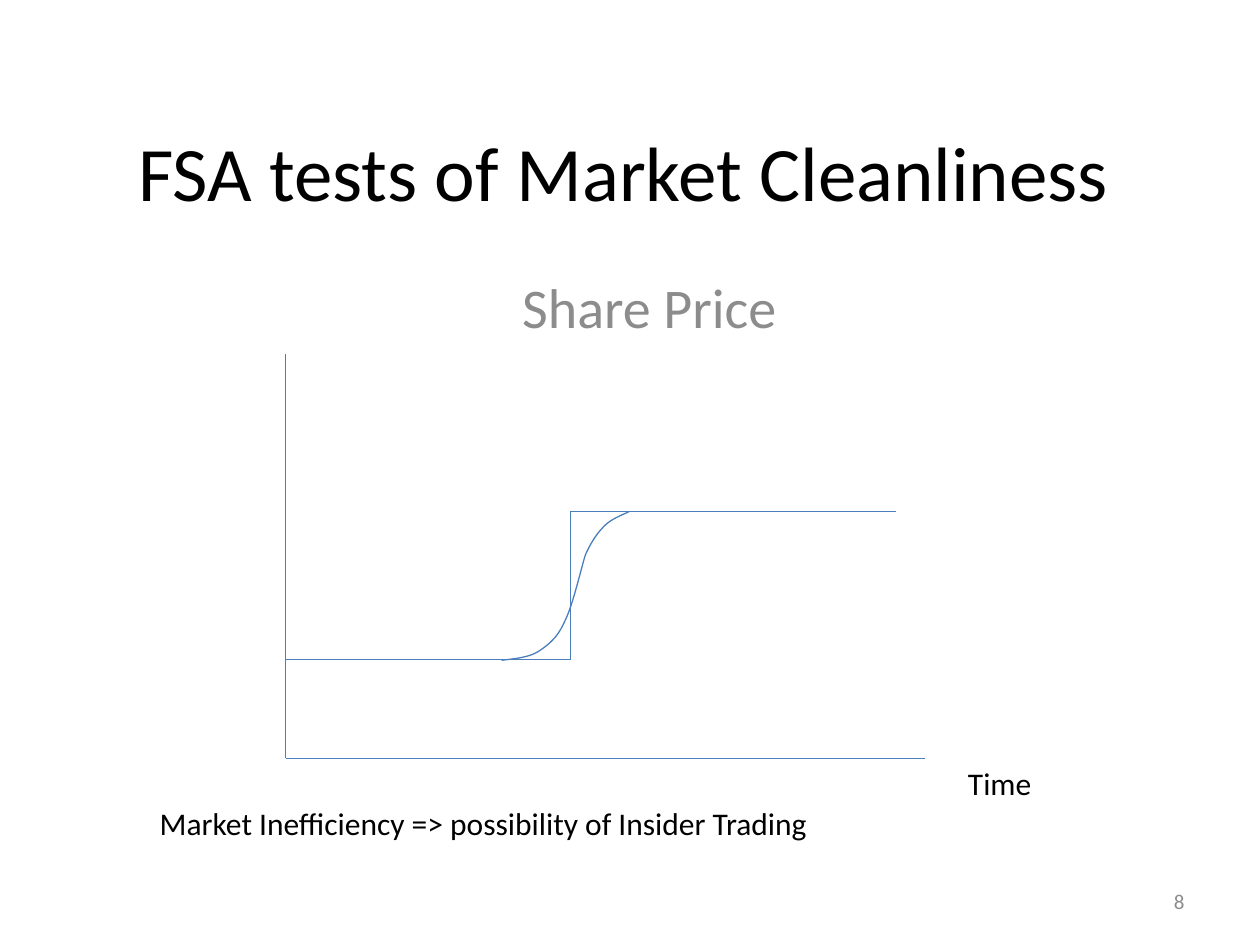
from pptx import Presentation
from pptx.dml.color import RGBColor
from pptx.enum.shapes import MSO_CONNECTOR as Link
from pptx.enum.text import MSO_ANCHOR as Anchor, PP_ALIGN as Align
from pptx.oxml.ns import qn
from pptx.util import Pt
from lxml.etree import SubElement

BLACK = RGBColor(0x00, 0x00, 0x00)
GREY = RGBColor(0x8C, 0x8C, 0x8C)
BLUE = RGBColor(0x4B, 0x7E, 0xBC)
FONT = "Calibri"

# Bezier points from the lower price level to the upper one
CURVE = [(0, 85), (8, 84), (15, 83.5), (21, 80), (27, 76), (32, 72),
         (36, 63), (41, 53), (45, 34), (48, 24.5), (52, 16), (55, 12),
         (59, 8), (63, 4), (70, 1.5), (73, 0)]


def write(shape, text, size=18, color=BLACK, align=Align.LEFT,
          anchor=Anchor.TOP):
    frame = shape.text_frame
    frame.word_wrap = True
    frame.vertical_anchor = anchor
    par = frame.paragraphs[0]
    par.alignment = align
    run = par.add_run()
    run.text = text
    run.font.name = FONT
    run.font.size = Pt(size)
    run.font.color.rgb = color


def place(shape, box):
    shape.left, shape.top, shape.width, shape.height = map(Pt, box)
    return shape


def label(slide, box, text, **style):
    write(slide.shapes.add_textbox(*map(Pt, box)), text, **style)


def stroke(shape):
    shape.line.color.rgb = BLUE
    shape.line.width = Pt(0.75)


def rule(slide, start, end):
    line = slide.shapes.add_connector(Link.STRAIGHT, *map(Pt, start + end))
    stroke(line)
    SubElement(line._element.spPr, qn("a:effectLst"))


def trace(points, steps=12):
    """Return points along a chain of cubic Bezier segments."""
    out = [points[0]]
    for i in range(0, len(points) - 1, 3):
        quad = points[i:i + 4]
        for n in range(1, steps + 1):
            t = n / steps
            u = 1 - t
            parts = (u ** 3, 3 * u * u * t, 3 * u * t * t, t ** 3)
            out.append(tuple(sum(k * p[axis] for k, p in zip(parts, quad))
                             for axis in (0, 1)))
    return out


def heading(slide, box):
    left, top, width, height = box
    write(place(slide.shapes.title, (left, top, width, 116)),
          "FSA tests of Market Cleanliness", size=44,
          align=Align.CENTER, anchor=Anchor.MIDDLE)
    write(place(slide.placeholders[1],
                (left + 33.8, top + 112.3, 573.8, height - 112.3)),
          "Share Price", size=32, color=GREY, align=Align.CENTER)


def graph(slide, box):
    """Draw the axes, the sudden price step and the gradual price curve."""
    left, top, width, height = box
    right, base = left + width, top + height
    low, high = top + 174.7, top + 90
    mid, end = left + 163, left + 348.7

    rule(slide, (left, top), (left, base))
    rule(slide, (left, base), (right, base))
    path = [(left, low), (mid, low), (mid, high), (end, high)]
    for start, stop in zip(path, path[1:]):
        rule(slide, start, stop)

    dots = [(Pt(left + 123.4 + x), Pt(high + y)) for x, y in trace(CURVE)]
    maker = slide.shapes.build_freeform(*dots[0])
    maker.add_line_segments(dots[1:], close=False)
    curve = maker.convert_to_shape()
    curve.shadow.inherit = False
    curve.fill.background()
    stroke(curve)

    label(slide, (right + 17.4, base, 84, 29), "Time")


def footer(slide, box):
    left, top, width, height = box
    label(slide, (left, top, 461.5, 29),
          "Market Inefficiency => possibility of Insider Trading")
    label(slide, (left + width - 168, top + height - 28.8, 168, 28.8), "8",
          size=12, color=GREY, align=Align.RIGHT, anchor=Anchor.MIDDLE)


def main():
    deck = Presentation()
    deck.slide_width, deck.slide_height = Pt(720), Pt(540)
    slide = deck.slides.add_slide(deck.slide_layouts[0])
    heading(slide, (50.4, 39.6, 612, 455.8))
    graph(slide, (163.2, 202.3, 365.4, 231))
    footer(slide, (84.2, 455.8, 599.8, 73.4))
    deck.save("out.pptx")


if __name__ == "__main__":
    main()
